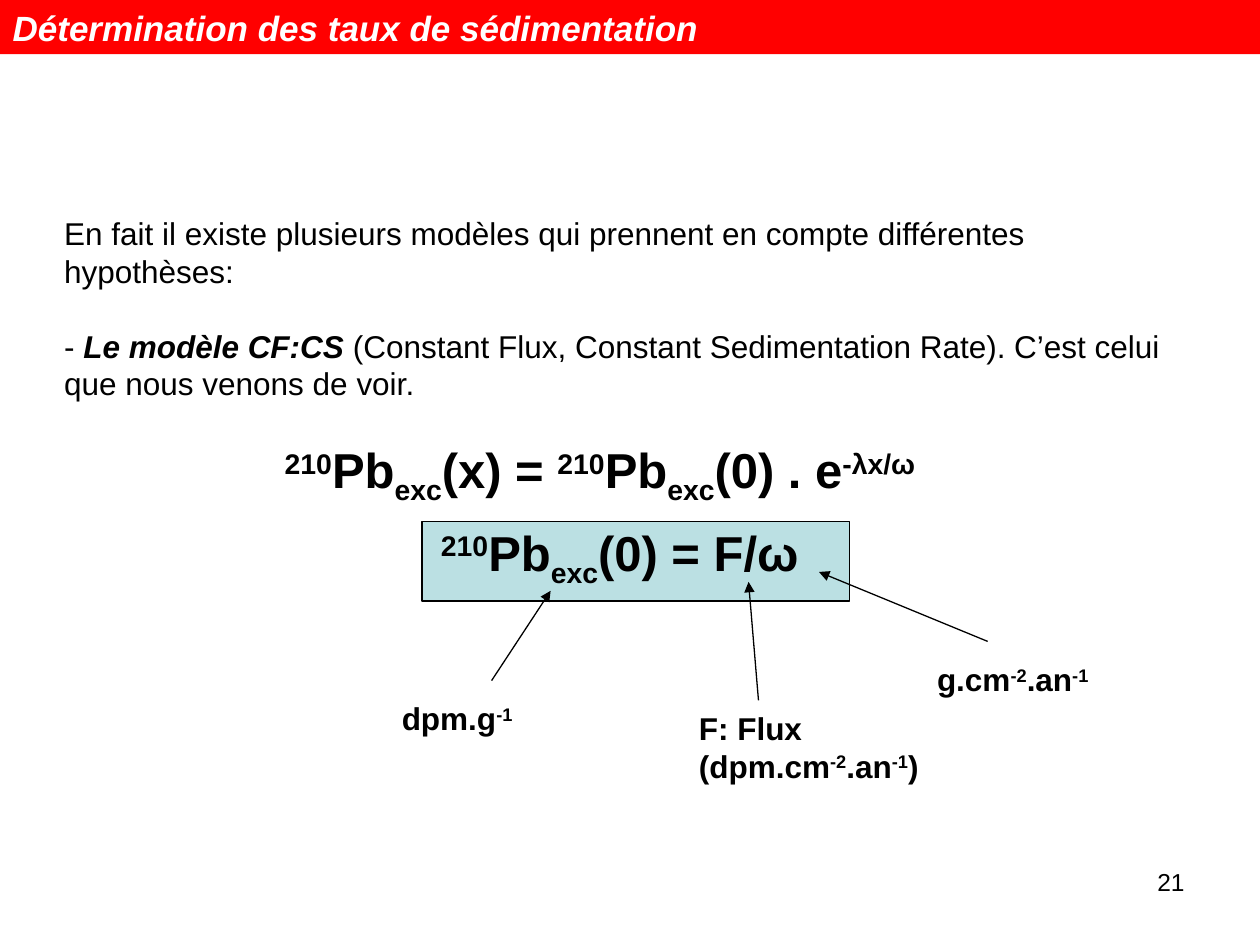
from lxml import etree
from pptx import Presentation
from pptx.dml.color import RGBColor
from pptx.enum.shapes import MSO_CONNECTOR, MSO_SHAPE
from pptx.enum.text import MSO_ANCHOR, MSO_AUTO_SIZE, PP_ALIGN
from pptx.oxml.ns import qn
from pptx.util import Cm, Pt

STRAIGHT = MSO_CONNECTOR.STRAIGHT
RECTANGLE = MSO_SHAPE.RECTANGLE
MIDDLE, TOP = MSO_ANCHOR.MIDDLE, MSO_ANCHOR.TOP
NO_FIT, FIT_SHAPE = MSO_AUTO_SIZE.NONE, MSO_AUTO_SIZE.SHAPE_TO_FIT_TEXT
LEFT, RIGHT = PP_ALIGN.LEFT, PP_ALIGN.RIGHT

RED = RGBColor(0xFF, 0x00, 0x00)
PALE_BLUE = RGBColor(0xBB, 0xE0, 0xE3)
BLACK = RGBColor(0x00, 0x00, 0x00)
WHITE = RGBColor(0xFF, 0xFF, 0xFF)

FONT = "Arial"
SUPER, SUB = 30, -25
LEAD_EXC = [("210", SUPER), ("Pb", 0), ("exc", SUB)]
PER_YEAR = [(".an", 0), ("-1", SUPER)]
PER_CM2_YEAR = [("-2", SUPER), *PER_YEAR]


def place(shape, left, top, width, height):
    shape.left, shape.top = Cm(left), Cm(top)
    shape.width, shape.height = Cm(width), Cm(height)


def style(paragraph, size, color=BLACK, bold=False, italic=False, align=LEFT):
    paragraph.alignment = align
    font = paragraph.font
    font.name, font.size = FONT, Pt(size)
    font.bold, font.italic = bold, italic
    font.color.rgb = color


def add_title(slide, text):
    title = slide.shapes.title
    place(title, 0, 0, 25.4, 1.09)
    title.fill.solid()
    title.fill.fore_color.rgb = RED
    frame = title.text_frame
    frame.text = text
    frame.auto_size = NO_FIT
    frame.vertical_anchor = MIDDLE
    style(frame.paragraphs[0], 20, WHITE, bold=True, italic=True)


def add_body(slide, intro, model, explanation):
    body = slide.placeholders[1]
    place(body, 1.04, 4.19, 23.27, 4.06)
    frame = body.text_frame
    frame.auto_size = NO_FIT
    frame.vertical_anchor = TOP
    frame.text = intro
    item = frame.add_paragraph()
    item.add_run().text = "- "
    model_name = item.add_run()
    model_name.text = model
    model_name.font.bold = model_name.font.italic = True
    item.add_run().text = explanation
    for paragraph, gap in zip(frame.paragraphs, (0, 21)):
        style(paragraph, 18)
        paragraph.space_before = Pt(gap)
        properties = paragraph._p.get_or_add_pPr()
        properties.set("marL", "0")
        properties.set("indent", "0")
        bullet = etree.Element(qn("a:buNone"))
        properties.find(qn("a:defRPr")).addprevious(bullet)


def add_formula(slide, box, size, *lines):
    frame = slide.shapes.add_textbox(*map(Cm, box)).text_frame
    frame.word_wrap = False
    frame.auto_size = FIT_SHAPE
    for number, line in enumerate(lines):
        paragraph = frame.add_paragraph() if number else frame.paragraphs[0]
        style(paragraph, size, bold=True)
        for text, baseline in line:
            run = paragraph.add_run()
            run.text = text
            if baseline:
                run._r.get_or_add_rPr().set("baseline", str(baseline * 1000))


def add_highlight(slide, box):
    highlight = slide.shapes.add_shape(RECTANGLE, *map(Cm, box))
    highlight.shadow.inherit = False
    highlight.fill.solid()
    highlight.fill.fore_color.rgb = PALE_BLUE
    highlight.line.color.rgb = BLACK
    highlight.line.width = Pt(0.75)


def add_arrow(slide, *ends):
    arrow = slide.shapes.add_connector(STRAIGHT, *map(Cm, ends))
    arrow.line.color.rgb = BLACK
    arrow.line.width = Pt(0.75)
    etree.SubElement(arrow.line._get_or_add_ln(), qn("a:tailEnd"), type="triangle")
    etree.SubElement(arrow._element.spPr, qn("a:effectLst"))


def add_page_number(slide, number):
    frame = slide.shapes.add_textbox(Cm(18.21), Cm(17.35), Cm(5.92), Cm(1.32)).text_frame
    frame.word_wrap = True
    frame.text = number
    style(frame.paragraphs[0], 14, align=RIGHT)


def main():
    deck = Presentation()
    deck.slide_width, deck.slide_height = Cm(25.4), Cm(19.05)
    slide = deck.slides.add_slide(deck.slide_layouts[1])

    add_title(slide, "Détermination des taux de sédimentation")
    add_body(
        slide,
        "En fait il existe plusieurs modèles qui prennent en compte différentes hypothèses:",
        "Le modèle CF:CS",
        " (Constant Flux, Constant Sedimentation Rate). C’est celui que nous venons de voir.",
    )
    add_highlight(slide, (8.51, 10.52, 8.61, 1.6))
    add_formula(slide, (5.49, 8.74, 14.07, 1.45), 28,
                [*LEAD_EXC, ("(x) = ", 0), *LEAD_EXC, ("(0) . e", 0), ("-λx/ω", SUPER)])
    add_formula(slide, (8.64, 10.41, 8.18, 1.45), 28, [*LEAD_EXC, ("(0) = F/ω", 0)])

    add_formula(slide, (7.85, 13.97, 2.79, 1.02), 18, [("dpm.g", 0), ("-1", SUPER)])
    add_formula(slide, (13.84, 14.17, 5.03, 1.78), 18,
                [("F: Flux", 0)], [("(dpm.cm", 0), *PER_CM2_YEAR, (")", 0)])
    add_formula(slide, (18.64, 13.18, 3.66, 1.02), 18, [("g.cm", 0), *PER_CM2_YEAR])

    add_arrow(slide, 9.91, 13.72, 11.1, 11.91)
    add_arrow(slide, 15.29, 14.12, 15.09, 11.73)
    add_arrow(slide, 19.91, 12.93, 16.51, 11.53)
    add_page_number(slide, "21")
    deck.save("out.pptx")


if __name__ == "__main__":
    main()
